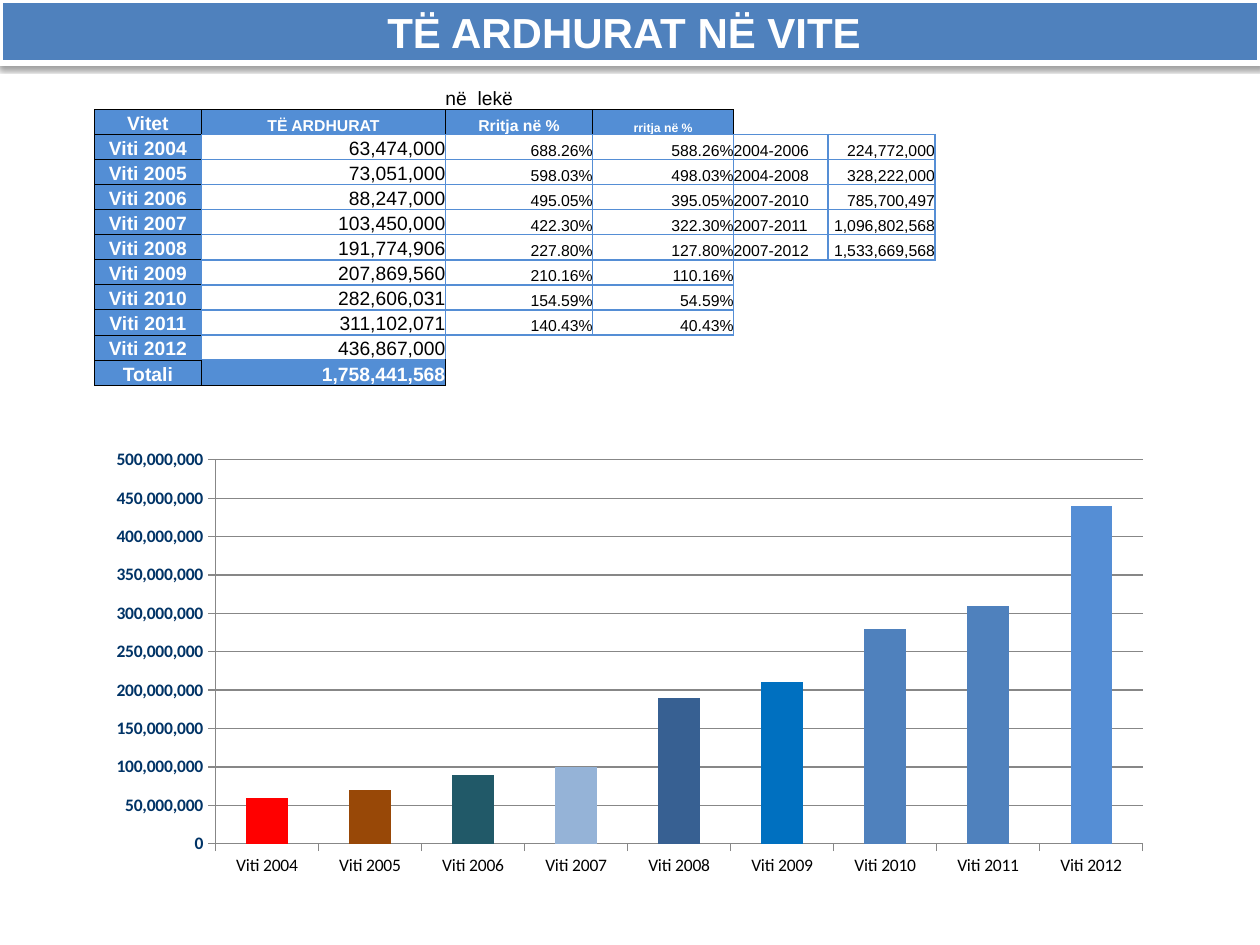
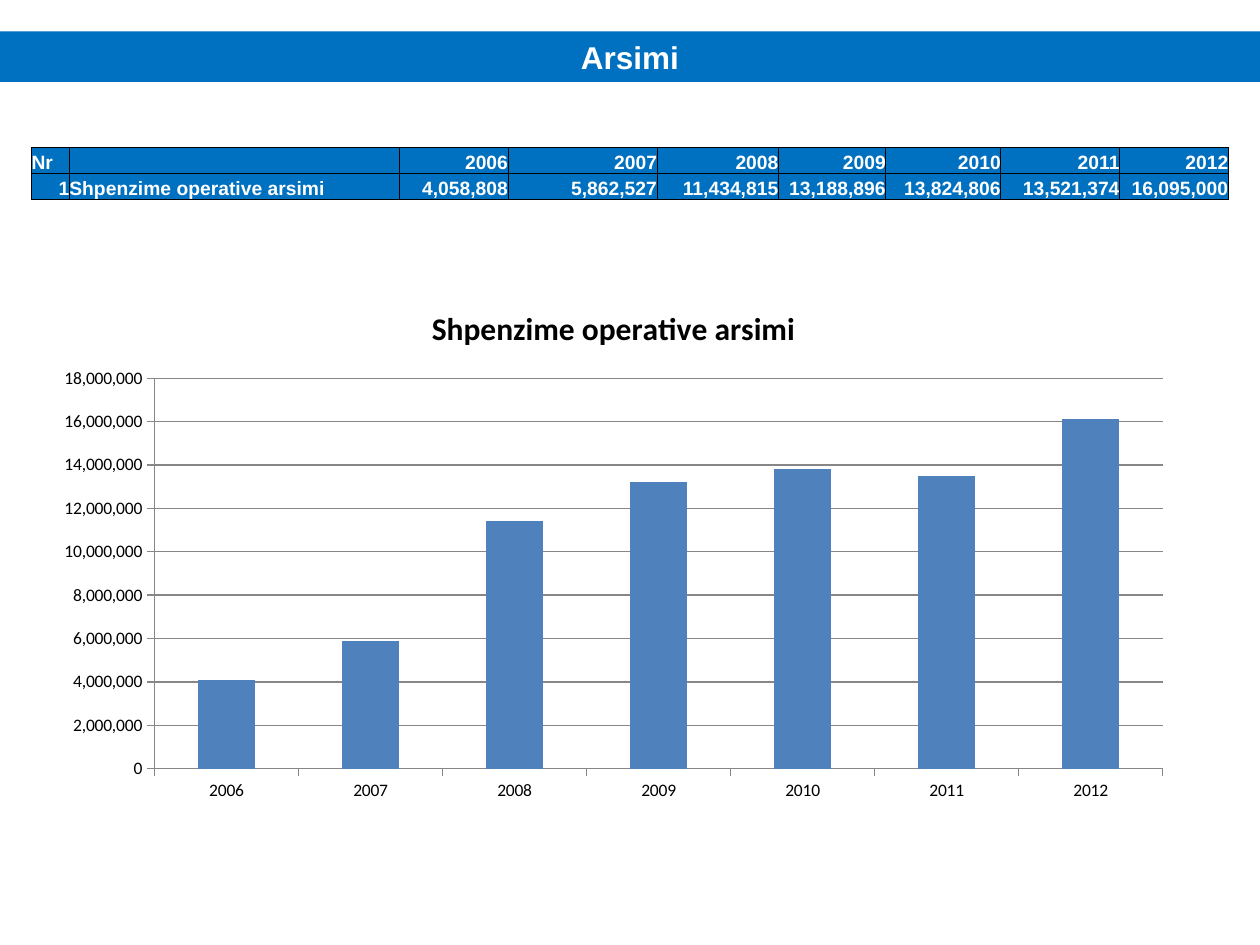
from dataclasses import dataclass, replace
from lxml.etree import SubElement
from pptx import Presentation
from pptx.chart.data import CategoryChartData
from pptx.dml.color import RGBColor
from pptx.enum.chart import XL_CHART_TYPE, XL_TICK_LABEL_POSITION, XL_TICK_MARK
from pptx.enum.shapes import MSO_SHAPE
from pptx.enum.text import MSO_ANCHOR, MSO_AUTO_SIZE, PP_ALIGN
from pptx.oxml import parse_xml
from pptx.oxml.ns import nsdecls, qn
from pptx.util import Inches, Pt


@dataclass(frozen=True)
class Theme:
    heading_font: str = "Arial"
    chart_font: str = "Calibri"
    white: str = "FFFFFF"
    black: str = "000000"
    accent: str = "4F81BD"
    strong: str = "0070C0"
    header: str = "538ED5"
    frame: str = "558ED5"
    axis_line: str = "878787"
    axis_text: str = "003366"
    large_title: int = 24
    title: int = 18
    cell: int = 11
    small_cell: int = 9
    tiny_cell: int = 7
    axis: int = 10


THEME = Theme()


@dataclass(frozen=True)
class CellStyle:
    size: int = THEME.cell
    align: PP_ALIGN = PP_ALIGN.LEFT
    color: str = THEME.black
    bold: bool = False
    fill: str | None = None
    framed: bool = False


PLAIN = CellStyle()
INCOME_LABEL = CellStyle(align=PP_ALIGN.CENTER, color=THEME.white, bold=True, fill=THEME.header)
INCOME_VALUE = CellStyle(align=PP_ALIGN.RIGHT, framed=True)
EDUCATION_TEXT = CellStyle(color=THEME.white, bold=True, fill=THEME.strong)

INCOME_COLUMNS = [0.85, 1.94, 1.17, 1.12, 0.75, 0.85]
INCOME_HEADER_SIZES = [THEME.cell, THEME.small_cell, THEME.small_cell, THEME.tiny_cell]
INCOME_YEARS = [
    ["Viti 2004", "63,474,000", "688.26%", "588.26%", "2004-2006", "224,772,000"],
    ["Viti 2005", "73,051,000", "598.03%", "498.03%", "2004-2008", "328,222,000"],
    ["Viti 2006", "88,247,000", "495.05%", "395.05%", "2007-2010", "785,700,497"],
    ["Viti 2007", "103,450,000", "422.30%", "322.30%", "2007-2011", "1,096,802,568"],
    ["Viti 2008", "191,774,906", "227.80%", "127.80%", "2007-2012", "1,533,669,568"],
    ["Viti 2009", "207,869,560", "210.16%", "110.16%", "", ""],
    ["Viti 2010", "282,606,031", "154.59%", "54.59%", "", ""],
    ["Viti 2011", "311,102,071", "140.43%", "40.43%", "", ""],
    ["Viti 2012", "436,867,000", "", "", "", ""],
]
INCOME_ROWS = [
    ["", "", "në  lekë", "", "", ""],
    ["Vitet", "TË ARDHURAT", "Rritja në %", "rritja në %", "", ""],
    *INCOME_YEARS,
    ["Totali", "1,758,441,568", "", "", "", ""],
]
INCOME_BAR_COLORS = {
    0: "FF0000", 1: "984807", 2: "215968", 3: "95B3D7",
    4: "376092", 5: THEME.strong, 8: THEME.frame,
}

EDUCATION_COLUMNS = [0.3, 2.61, 0.86, 1.18, 0.96, 0.85, 0.91, 0.94, 0.86]
EDUCATION_ROWS = [
    ["Nr", "", "2006", "2007", "2008", "2009", "2010", "2011", "2012"],
    ["1", "Shpenzime operative arsimi", "4,058,808", "5,862,527", "11,434,815",
     "13,188,896", "13,824,806", "13,521,374", "16,095,000"],
]


def rgb(color):
    return RGBColor.from_string(color)


def style_font(font, name, size, color, bold=False):
    font.name = name
    font.size = Pt(size)
    font.bold = bold
    font.color.rgb = rgb(color)


def rounded_amounts(texts, digits):
    return [round(int(text.replace(",", "")), -digits) for text in texts]


def add_title_band(slide, box, text, size, fill):
    band = slide.shapes.add_shape(MSO_SHAPE.RECTANGLE, *map(Inches, box))
    band.shadow.inherit = False
    band.fill.solid()
    band.fill.fore_color.rgb = rgb(fill)
    band.line.fill.background()
    band.text_frame.text = text
    band.text_frame.word_wrap = True
    band.text_frame.auto_size = MSO_AUTO_SIZE.SHAPE_TO_FIT_TEXT
    band.text_frame.vertical_anchor = MSO_ANCHOR.MIDDLE
    paragraph = band.text_frame.paragraphs[0]
    paragraph.alignment = PP_ALIGN.CENTER
    style_font(paragraph.runs[0].font, THEME.heading_font, size, THEME.white, True)
    return band


def outline_with_shadow(band):
    band.line.color.rgb = rgb(THEME.white)
    band.line.width = Pt(3)
    effects = band._element.spPr.find(qn("a:effectLst"))
    shadow = SubElement(effects, qn("a:outerShdw"), blurRad="40000", dist="20000",
                        dir="5400000", rotWithShape="0")
    color = SubElement(shadow, qn("a:srgbClr"), val=THEME.black)
    SubElement(color, qn("a:alpha"), val="38000")


def edge_between(style, neighbour):
    if style.framed or neighbour.framed:
        return THEME.frame, 1
    if style.fill or neighbour.fill:
        return THEME.black, 0.5
    return None


def add_borders(cell, styles, row, column):
    properties = cell._tc.get_or_add_tcPr()
    neighbours = {"lnL": (row, column - 1), "lnR": (row, column + 1),
                  "lnT": (row - 1, column), "lnB": (row + 1, column)}
    for position, (tag, place) in enumerate(neighbours.items()):
        edge = edge_between(styles[row, column], styles.get(place, PLAIN))
        if edge:
            color, width = edge
            properties.insert(position, parse_xml(
                f'<a:{tag} {nsdecls("a")} w="{Pt(width)}"><a:solidFill>'
                f'<a:srgbClr val="{color}"/></a:solidFill></a:{tag}>'))
        else:
            properties.insert(position, parse_xml(
                f'<a:{tag} {nsdecls("a")} w="0"><a:noFill/></a:{tag}>'))


def fill_cell(cell, text, style):
    cell.margin_left = cell.margin_right = cell.margin_top = cell.margin_bottom = 0
    cell.vertical_anchor = MSO_ANCHOR.BOTTOM
    if style.fill:
        cell.fill.solid()
        cell.fill.fore_color.rgb = rgb(style.fill)
    else:
        cell.fill.background()
    paragraph = cell.text_frame.paragraphs[0]
    paragraph.alignment = style.align
    if text:
        paragraph.text = text
        style_font(paragraph.runs[0].font, THEME.heading_font, style.size, style.color, style.bold)
    else:
        SubElement(paragraph._p, qn("a:endParaRPr"), sz=str(style.size * 100))


def add_grid(slide, box, columns, heights, rows, choose_style):
    left, top, width, height = map(Inches, box)
    table = slide.shapes.add_table(len(rows), len(columns), left, top, width, height).table
    table.first_row = table.horz_banding = False
    for column, share in zip(table.columns, columns):
        column.width = round(width * share / sum(columns))
    for row, share in zip(table.rows, heights):
        row.height = round(height * share / sum(heights))
    styles = {(row, column): choose_style(row, column, text)
              for row, texts in enumerate(rows) for column, text in enumerate(texts)}
    for (row, column), style in styles.items():
        cell = table.cell(row, column)
        fill_cell(cell, rows[row][column], style)
        add_borders(cell, styles, row, column)
    return table


def income_style(row, column, text):
    if row == 0 or not text:
        return PLAIN
    if row == 1:
        return replace(INCOME_LABEL, size=INCOME_HEADER_SIZES[column])
    if column == 0:
        return INCOME_LABEL
    if row == len(INCOME_ROWS) - 1:
        return replace(INCOME_LABEL, align=PP_ALIGN.RIGHT)
    if column == 1:
        return INCOME_VALUE
    align = PP_ALIGN.LEFT if column == 4 else PP_ALIGN.RIGHT
    return replace(INCOME_VALUE, size=THEME.small_cell, align=align)


def education_style(row, column, text):
    if column > 1 or text == "1":
        return replace(EDUCATION_TEXT, align=PP_ALIGN.RIGHT)
    return EDUCATION_TEXT


def style_axis(axis, color, bold=False):
    style_font(axis.tick_labels.font, THEME.chart_font, THEME.axis, color, bold)
    axis.format.line.color.rgb = rgb(THEME.axis_line)
    axis.major_tick_mark = XL_TICK_MARK.OUTSIDE


def add_column_chart(slide, box, categories, name, amounts, axis_color=THEME.black, axis_bold=False):
    data = CategoryChartData(number_format="#,##0")
    data.categories = categories
    data.add_series(name, amounts)
    chart = slide.shapes.add_chart(XL_CHART_TYPE.COLUMN_STACKED, *map(Inches, box), data).chart
    chart.has_legend = False
    chart.has_title = False
    style_font(chart.font, THEME.chart_font, THEME.axis, THEME.black)
    plot = chart.plots[0]
    plot.vary_by_categories = False
    plot.gap_width = 150
    plot.overlap = 100
    fill = plot.series[0].format.fill
    fill.solid()
    fill.fore_color.rgb = rgb(THEME.accent)
    style_axis(chart.category_axis, THEME.black)
    style_axis(chart.value_axis, axis_color, axis_bold)
    chart.value_axis.has_major_gridlines = True
    chart.value_axis.major_gridlines.format.line.color.rgb = rgb(THEME.axis_line)
    chart.value_axis.tick_labels.number_format = "#,##0"
    chart.value_axis.tick_labels.number_format_is_linked = False
    return chart


def place_plot(chart, x, y, width, height):
    area = chart._chartSpace.chart.plotArea
    for layout in area.findall(qn("c:layout")):
        area.remove(layout)
    layout = parse_xml(f'<c:layout {nsdecls("c")}/>')
    area.insert(0, layout)
    manual = SubElement(layout, qn("c:manualLayout"))
    settings = {"layoutTarget": "inner", "xMode": "edge", "yMode": "edge",
                "x": x, "y": y, "w": width, "h": height}
    for tag, value in settings.items():
        SubElement(manual, qn(f"c:{tag}"), val=str(value))


def color_bars(chart, colors):
    for index, color in colors.items():
        fill = chart.plots[0].series[0].points[index].format.fill
        fill.solid()
        fill.fore_color.rgb = rgb(color)


def build_income_slide(slide):
    categories = [row[0] for row in INCOME_YEARS]
    amounts = rounded_amounts([row[1] for row in INCOME_YEARS], 7)
    chart = add_column_chart(slide, (0.92, 3.5, 8.41, 3.58), categories, "Series 1",
                             amounts, THEME.axis_text, True)
    chart.category_axis.tick_label_position = XL_TICK_LABEL_POSITION.LOW
    place_plot(chart, 0.094, 0.042, 0.875, 0.851)
    color_bars(chart, INCOME_BAR_COLORS)
    table = add_grid(slide, (0.75, 0.67, 6.67, 2.39), INCOME_COLUMNS, [1] * len(INCOME_ROWS),
                     INCOME_ROWS, income_style)
    table.cell(0, 0).merge(table.cell(0, 1))
    band = add_title_band(slide, (0, 0, 10, 0.5), "TË ARDHURAT NË VITE ",
                          THEME.large_title, THEME.accent)
    outline_with_shadow(band)


def build_education_slide(slide):
    add_title_band(slide, (0, 0.25, 10, 0.4), "Arsimi", THEME.title, THEME.strong)
    add_grid(slide, (0.25, 1.17, 9.5, 0.41), EDUCATION_COLUMNS, [0.21, 0.2],
             EDUCATION_ROWS, education_style)
    years, spending = EDUCATION_ROWS
    name = spending[1]
    chart = add_column_chart(slide, (0.33, 2.25, 9.08, 4.19), years[2:], name,
                             rounded_amounts(spending[2:], 5))
    title = chart.chart_title.text_frame
    title.text = name
    style_font(title.paragraphs[0].runs[0].font, THEME.chart_font, THEME.title, THEME.black, True)
    chart.chart_title.include_in_layout = False


def main():
    presentation = Presentation()
    presentation.slide_width = Inches(10)
    presentation.slide_height = Inches(7.5)
    for build in (build_income_slide, build_education_slide):
        build(presentation.slides.add_slide(presentation.slide_layouts[6]))
    presentation.save("out.pptx")


if __name__ == "__main__":
    main()
